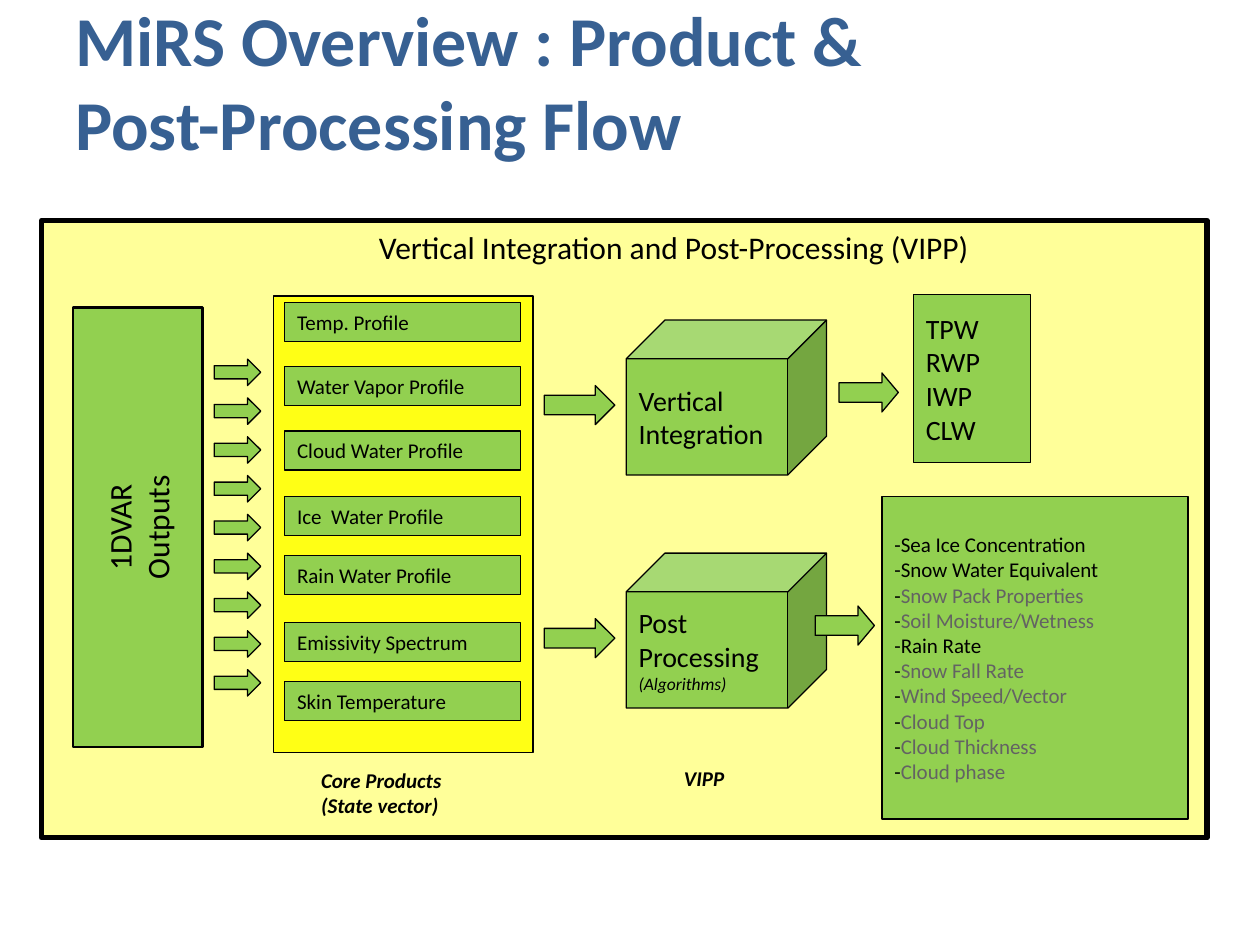
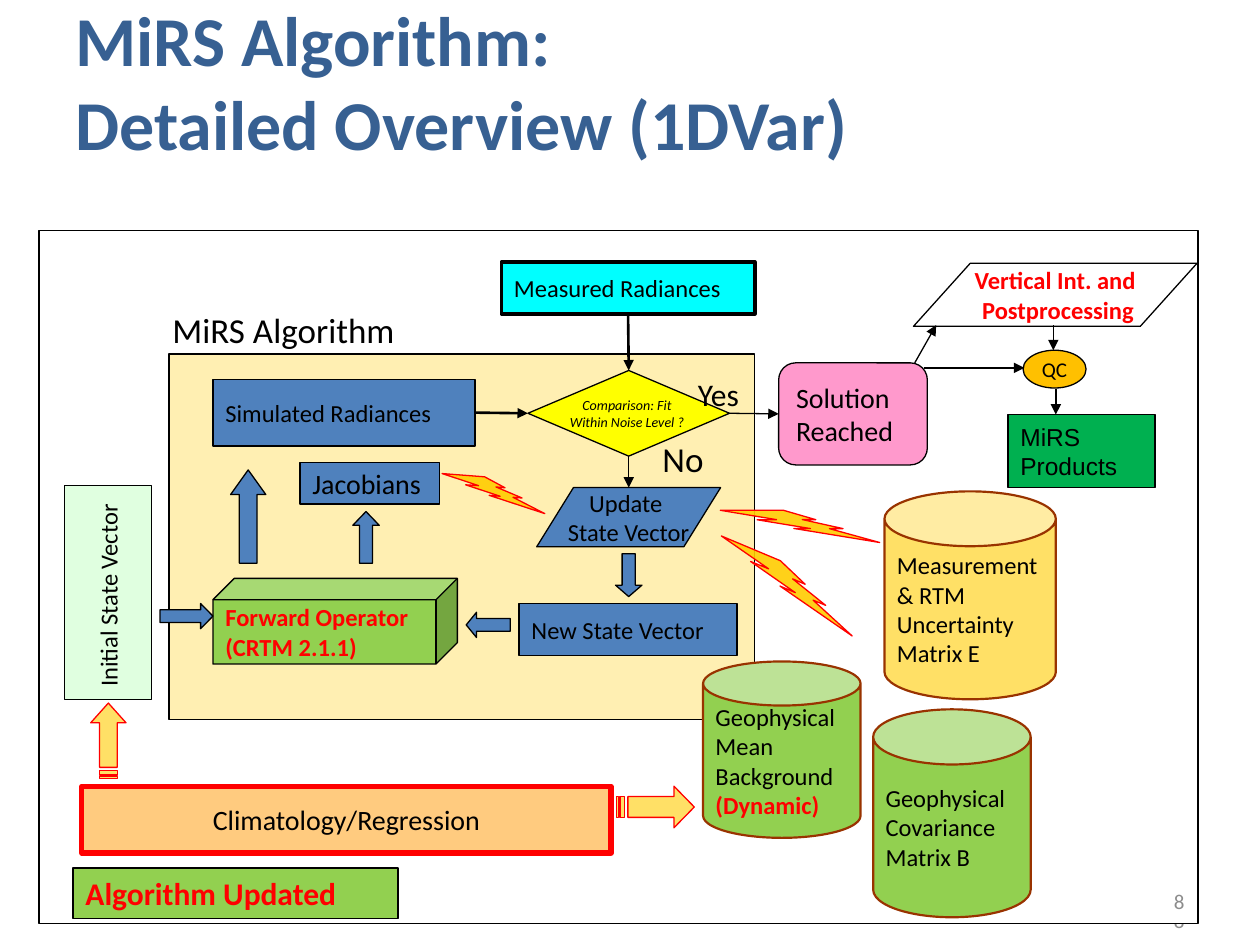
from dataclasses import dataclass, replace

from pptx import Presentation
from pptx.dml.color import RGBColor
from pptx.enum.shapes import MSO_CONNECTOR, MSO_SHAPE
from pptx.enum.text import MSO_ANCHOR, PP_ALIGN
from pptx.oxml.ns import qn
from pptx.oxml.xmlchemy import OxmlElement
from pptx.util import Inches, Pt

WIDTH, HEIGHT = Inches(10), Inches(7.5)
COLUMN, ROW = WIDTH / 100, HEIGHT / 75

BLACK = RGBColor(0x00, 0x00, 0x00)
WHITE = RGBColor(0xFF, 0xFF, 0xFF)
RED = RGBColor(0xFF, 0x00, 0x00)
GREEN = RGBColor(0x92, 0xD0, 0x50)
DARK_GREEN = RGBColor(0x00, 0xB0, 0x50)
MINT = RGBColor(0xCC, 0xFF, 0xCC)
BLUE = RGBColor(0x4F, 0x81, 0xBD)
TITLE_BLUE = RGBColor(0x37, 0x60, 0x92)
CYAN = RGBColor(0x00, 0xFF, 0xFF)
YELLOW = RGBColor(0xFF, 0xFF, 0x00)
CREAM = RGBColor(0xFF, 0xFF, 0x99)
GOLD = RGBColor(0xFF, 0xCC, 0x00)
AMBER = RGBColor(0xFF, 0xC0, 0x00)
ORANGE = RGBColor(0xFF, 0x99, 0x00)
PINK = RGBColor(0xFF, 0x99, 0xCC)
BROWN = RGBColor(0x99, 0x33, 0x00)
GRAY = RGBColor(0x63, 0x63, 0x63)
PAGE_GRAY = RGBColor(0x8C, 0x8C, 0x8C)


@dataclass(frozen=True)
class Style:
    size: float
    color: RGBColor = BLACK
    bold: bool = False
    italic: bool = False
    font: str = "Calibri"


TITLE = Style(40, TITLE_BLUE, bold=True)
LARGE, MEDIUM, NORMAL, SMALL = Style(18), Style(16), Style(14), Style(12)
CAPTION = replace(SMALL, bold=True, italic=True)
UPDATED = replace(NORMAL, color=RED, bold=True)


@dataclass(frozen=True)
class Box:
    left: float
    top: float
    width: float
    height: float

    def area(self, left, top, width, height):
        return Box(self.left + left, self.top + top, width, height)

    def point(self, column, row):
        return round((self.left + column) * COLUMN), round((self.top + row) * ROW)

    def emu(self):
        return (*self.point(0, 0), round(self.width * COLUMN), round(self.height * ROW))

    def turned(self):
        shift = (self.width - self.height) / 2
        return self.area(shift, -shift, self.height, self.width)


def write(shape, lines, style, align=PP_ALIGN.LEFT, anchor=MSO_ANCHOR.MIDDLE, wrap=False):
    frame = shape.text_frame
    frame.word_wrap = wrap
    frame.vertical_anchor = anchor
    for index, line in enumerate(lines):
        paragraph = frame.paragraphs[0] if index == 0 else frame.add_paragraph()
        paragraph.alignment = align
        for text, run_style in [(line, style)] if isinstance(line, str) else line:
            run = paragraph.add_run()
            run.text = text
            font = run.font
            font.name, font.size = run_style.font, Pt(run_style.size)
            font.bold, font.italic = run_style.bold, run_style.italic
            font.color.rgb = run_style.color


def paint(shape, fill, line=BLACK, weight=0.75, opacity=100):
    shape.shadow.inherit = False
    shape.fill.solid()
    shape.fill.fore_color.rgb = fill
    shape.line.color.rgb = line
    shape.line.width = Pt(weight)
    if opacity < 100:
        alpha = OxmlElement("a:alpha")
        alpha.set("val", str(opacity * 1000))
        shape.element.spPr.find(qn("a:solidFill"))[0].append(alpha)


def add_block(slide, kind, box, fill, lines=(), style=NORMAL, align=PP_ALIGN.LEFT,
              adjust=(), rotation=0, **look):
    shape = slide.shapes.add_shape(kind, *box.emu())
    paint(shape, fill, **look)
    for index, value in enumerate(adjust):
        shape.adjustments[index] = value
    shape.rotation = rotation
    write(shape, lines, style, align)
    return shape


def add_label(slide, box, lines, style, align=PP_ALIGN.LEFT, anchor=MSO_ANCHOR.TOP, wrap=False):
    write(slide.shapes.add_textbox(*box.emu()), lines, style, align, anchor, wrap)


def add_arrow(slide, start, end, weight=0.75, source=None, target=None):
    connector = slide.shapes.add_connector(MSO_CONNECTOR.STRAIGHT, *start, *end)
    if source:
        connector.begin_connect(*source)
    if target:
        connector.end_connect(*target)
    connector.line.color.rgb = BLACK
    connector.line.width = Pt(weight)
    tail = OxmlElement("a:tailEnd")
    tail.set("type", "triangle")
    connector.element.spPr.find(qn("a:ln")).append(tail)
    connector.element.spPr.append(OxmlElement("a:effectLst"))


def add_striped_arrow(slide, box, rotation=0):
    def points(*shares):
        return [box.point(x * box.width, y * box.height) for x, y in shares]

    body, *stripes = (
        points((0.74, 0), (0.74, 0.25), (0.15, 0.25), (0.15, 0.75), (0.74, 0.75), (0.74, 1), (1, 0.5)),
        *(points((a, 0.25), (a, 0.75), (b, 0.75), (b, 0.25)) for a, b in ((0.05, 0.11), (0, 0.03))),
    )
    builder = slide.shapes.build_freeform(*body[0])
    builder.add_line_segments(body[1:], close=True)
    for stripe in stripes:
        builder.move_to(*stripe[0])
        builder.add_line_segments(stripe[1:], close=True)
    shape = builder.convert_to_shape()
    paint(shape, GOLD, line=RED, opacity=60)
    shape.rotation = rotation


def add_slide(presentation, title):
    slide = presentation.slides.add_slide(presentation.slide_layouts[6])
    add_label(slide, Box(5, 3.3, 73.3, 6.2), title, TITLE, anchor=MSO_ANCHOR.MIDDLE, wrap=True)
    return slide


def draw_outputs(slide, box):
    add_block(slide, MSO_SHAPE.RECTANGLE, box.area(0, 0, 10.3, box.height).turned(), GREEN,
              ["1DVAR", "Outputs"], LARGE, PP_ALIGN.CENTER, rotation=270, weight=1.5)
    for index in range(9):
        add_block(slide, MSO_SHAPE.RIGHT_ARROW, box.area(11.2, 4.1 + 3.08 * index, 3.7, 2.1), GREEN)


def draw_core_products(slide, box):
    add_block(slide, MSO_SHAPE.RECTANGLE, box, YELLOW, opacity=86)
    profiles = {
        "Temp. Profile": 0.5, "Water Vapor Profile": 5.6, "Cloud Water Profile": 10.7,
        "Ice  Water Profile": 15.9, "Rain Water Profile": 20.6,
        "Emissivity Spectrum": 25.9, "Skin Temperature": 30.6,
    }
    for name, row in profiles.items():
        add_block(slide, MSO_SHAPE.RECTANGLE, box.area(0.9, row, 18.7, 3.1), GREEN, [name], SMALL)
    add_label(slide, box.area(2.8, 36.9, 13.6, 5), ["Core Products", "(State vector)"], CAPTION)


def draw_stage(slide, box, lines, exit_column, result, result_lines, result_style):
    add_block(slide, MSO_SHAPE.RIGHT_ARROW, box.area(0, 5.2, 5.6, 3.1), GREEN)
    add_block(slide, MSO_SHAPE.CUBE, box.area(6.5, 0, 15.9, box.height), GREEN, lines, MEDIUM)
    add_block(slide, MSO_SHAPE.RECTANGLE, result, GREEN, result_lines, result_style)
    add_block(slide, MSO_SHAPE.RIGHT_ARROW, box.area(exit_column, 4.2, 4.7, 3.1), GREEN,
              adjust=(0.5, 0.42))


def draw_product_flow(slide, panel):
    add_block(slide, MSO_SHAPE.FLOWCHART_PROCESS, panel, CREAM, weight=3)
    add_label(slide, panel.area(25.8, 0.1, 55, 4),
              ["Vertical Integration and Post-Processing (VIPP)"], LARGE)
    draw_outputs(slide, panel.area(2.5, 6.9, 15, 34.9))
    draw_core_products(slide, panel.area(18.4, 6, 20.6, 36.2))
    draw_stage(slide, panel.area(39.9, 7.9, 28.1, 12.3), ["Vertical", "Integration"], 23.4,
               panel.area(69.2, 5.9, 9.3, 13.3), ["TPW", "RWP", "IWP", "CLW"], MEDIUM)
    planned = replace(SMALL, color=GRAY)
    products = [
        ("Sea Ice Concentration", SMALL), ("Snow Water Equivalent", SMALL),
        ("Snow Pack Properties", planned), ("Soil Moisture/Wetness", planned),
        ("Rain Rate", SMALL), ("Snow Fall Rate", planned), ("Wind Speed/Vector", planned),
        ("Cloud Top", planned), ("Cloud Thickness", planned), ("Cloud phase", planned),
    ]
    algorithms = [("(Algorithms)", Style(10, italic=True))]
    draw_stage(slide, panel.area(39.9, 26.4, 28.1, 12.3), ["Post", "Processing", algorithms], 21.5,
               panel.area(66.7, 21.9, 24.3, 25.6), [[("-", SMALL), item] for item in products], SMALL)
    add_label(slide, panel.area(50, 42.8, 5.9, 3), ["VIPP"], CAPTION)


def draw_algorithm(slide, box):
    add_label(slide, box.area(-0.7, -4.1, 29.8, 4.4), ["MiRS Algorithm"], Style(20))
    add_block(slide, MSO_SHAPE.RECTANGLE, box, GOLD, opacity=30)
    measured = add_block(slide, MSO_SHAPE.RECTANGLE, box.area(26.4, -7.3, 20.1, 4.1), CYAN,
                         ["Measured Radiances"], weight=2.25)
    simulated = add_block(slide, MSO_SHAPE.RECTANGLE, box.area(3.5, 2, 20.8, 5.3), BLUE,
                          ["Simulated Radiances"])
    add_block(slide, MSO_SHAPE.RECTANGLE, box.area(10.4, 8.6, 11.1, 3.3), BLUE, ["Jacobians"], MEDIUM)
    add_block(slide, MSO_SHAPE.CUBE, box.area(3.5, 17.8, 19.4, 6.8), GREEN,
              ["Forward Operator", "(CRTM 2.1.1)"], UPDATED)
    decision = add_block(slide, MSO_SHAPE.FLOWCHART_DECISION, box.area(28.5, 1.3, 16, 6.8), YELLOW,
                         ["Comparison: Fit ", "Within Noise Level ? "], Style(8, italic=True),
                         PP_ALIGN.CENTER)
    add_block(slide, MSO_SHAPE.FLOWCHART_DATA, box.area(29.2, 10.6, 14.6, 4.7), BLUE,
              ["Update ", "State Vector"], NORMAL, PP_ALIGN.CENTER)
    add_block(slide, MSO_SHAPE.RECTANGLE, box.area(27.8, 19.8, 17.3, 4.1), BLUE, ["New State Vector"])
    for kind, place, head in (
        (MSO_SHAPE.UP_ARROW, (4.9, 9.2, 2.8, 7.4), 0.7),
        (MSO_SHAPE.UP_ARROW, (14.6, 12.5, 2.1, 4.1), 0.52),
        (MSO_SHAPE.LEFT_ARROW, (23.6, 20.5, 3.5, 2), 0.41),
        (MSO_SHAPE.DOWN_ARROW, (35.45, 15.85, 2.1, 3.4), 0.43),
        (MSO_SHAPE.RIGHT_ARROW, (-0.7, 19.8, 4.2, 2), 0.49),
    ):
        add_block(slide, kind, box.area(*place), BLUE, adjust=(0.5, head))
    add_label(slide, box.area(41, 1.2, 6.1, 4), ["Yes"], LARGE)
    add_label(slide, box.area(38.2, 6.1, 5.6, 4.4), ["No"], Style(20))
    add_arrow(slide, box.point(36.5, -3.2), box.point(36.5, 1.3), 1.5, (measured, 2), (decision, 0))
    add_arrow(slide, box.point(24.3, 4.7), box.point(28.5, 4.7), 1.5, (simulated, 3), (decision, 1))
    add_arrow(slide, box.point(36.5, 8.1), box.point(36.5, 10.6), source=(decision, 2))
    add_bolt(slide, box.area(21.5, 9.9, 8.6, 2), 10.5)
    return decision


def add_bolt(slide, box, rotation):
    add_block(slide, MSO_SHAPE.LIGHTNING_BOLT, box, GOLD, rotation=rotation, line=RED, opacity=90)


def draw_solution(slide, box, decision):
    solution = add_block(slide, MSO_SHAPE.FLOWCHART_ALTERNATE_PROCESS, box.area(0, 7.9, 11.8, 8.1),
                         PINK, ["Solution", "Reached"], MEDIUM)
    add_arrow(slide, box.point(-3.9, 11.9), box.point(0, 11.9), 0.75, (decision, 3), (solution, 1))
    add_block(slide, MSO_SHAPE.FLOWCHART_DATA, box.area(10.7, 0, 22.5, 5), WHITE,
              ["Vertical Int. and", " Postprocessing"], UPDATED, PP_ALIGN.CENTER)
    add_block(slide, MSO_SHAPE.RECTANGLE, box.area(18.2, 12, 11.7, 5.8), DARK_GREEN,
              ["MiRS", "Products"], replace(NORMAL, font="Arial"), weight=1)
    add_block(slide, MSO_SHAPE.OVAL, box.area(19.4, 6.9, 5, 3), AMBER, ["QC"], SMALL, PP_ALIGN.CENTER)
    for start, end in (((10.8, 7.9), (12.5, 4.9)), ((11.5, 8.3), (19.5, 8.3)),
                       ((21.8, 4.9), (21.8, 6.9)), ((22, 10), (22, 12))):
        add_arrow(slide, box.point(*start), box.point(*end))


def draw_matrices(slide, box):
    add_bolt(slide, box.area(0.3, 6, 12.9, 2.6), 28)
    add_bolt(slide, box.area(1.3, 1.6, 12.8, 2), 4.1)
    dynamic = [("(Dynamic)", UPDATED)]
    for place, lid, fill, opacity, lines in (
        ((13.5, 17.3, 12.5, 16.5), 0.35, GREEN, 100, ["Geophysical", "Covariance", "Matrix B"]),
        ((14.4, 0, 13.6, 16.5), 0.32, GOLD, 60, ["Measurement", "& RTM", "Uncertainty", "Matrix E"]),
        ((0, 13.5, 12.5, 14), 0.28, GREEN, 100, ["Geophysical", "Mean", "Background", dynamic]),
    ):
        add_block(slide, MSO_SHAPE.CAN, box.area(*place), fill, lines, adjust=(lid,),
                  line=BROWN, weight=1.25, opacity=opacity)


def draw_climatology(slide, box):
    add_block(slide, MSO_SHAPE.RECTANGLE, box.area(0, 0, 6.9, 17).turned(), MINT,
              ["Initial State Vector"], rotation=270, opacity=60)
    add_block(slide, MSO_SHAPE.RECTANGLE, box.area(1.4, 23.9, 42, 5.3), ORANGE,
              ["Climatology/Regression"], MEDIUM, PP_ALIGN.CENTER, line=RED, weight=3, opacity=50)
    add_striped_arrow(slide, box.area(43.8, 23.9, 6.2, 3.3))
    add_striped_arrow(slide, box.area(2.1, 17.3, 2.8, 6).turned(), 270)
    add_block(slide, MSO_SHAPE.RECTANGLE, box.area(0.7, 30.4, 25.8, 4), GREEN,
              ["Algorithm Updated"], replace(UPDATED, size=18))


def add_page_number(slide, box):
    add_label(slide, box, ["8"], replace(SMALL, color=PAGE_GRAY), PP_ALIGN.RIGHT,
              MSO_ANCHOR.MIDDLE, wrap=True)


def draw_detailed_overview(slide, frame):
    add_page_number(slide, frame.area(86.1, 52.7, 5.8, 4))
    add_block(slide, MSO_SHAPE.RECTANGLE, frame, WHITE, weight=1)
    add_page_number(slide, frame.area(68.6, 51.2, 23.3, 4))
    decision = draw_algorithm(slide, frame.area(10.3, 9.8, 46.5, 29))
    draw_solution(slide, frame.area(58.7, 2.6, 33.2, 17.8), decision)
    draw_matrices(slide, frame.area(52.7, 20.7, 28, 33.8))
    draw_climatology(slide, frame.area(2, 20.2, 50, 34.5))


def main():
    presentation = Presentation()
    presentation.slide_width, presentation.slide_height = WIDTH, HEIGHT
    flow = add_slide(presentation, ["MiRS Overview : Product & Post-Processing Flow"])
    draw_product_flow(flow, Box(3.3, 17.5, 92.5, 49))
    detail = add_slide(presentation, ["MiRS Algorithm: ", "Detailed Overview (1DVar)"])
    draw_detailed_overview(detail, Box(3.1, 18.3, 92, 55))
    presentation.save("out.pptx")


if __name__ == "__main__":
    main()
